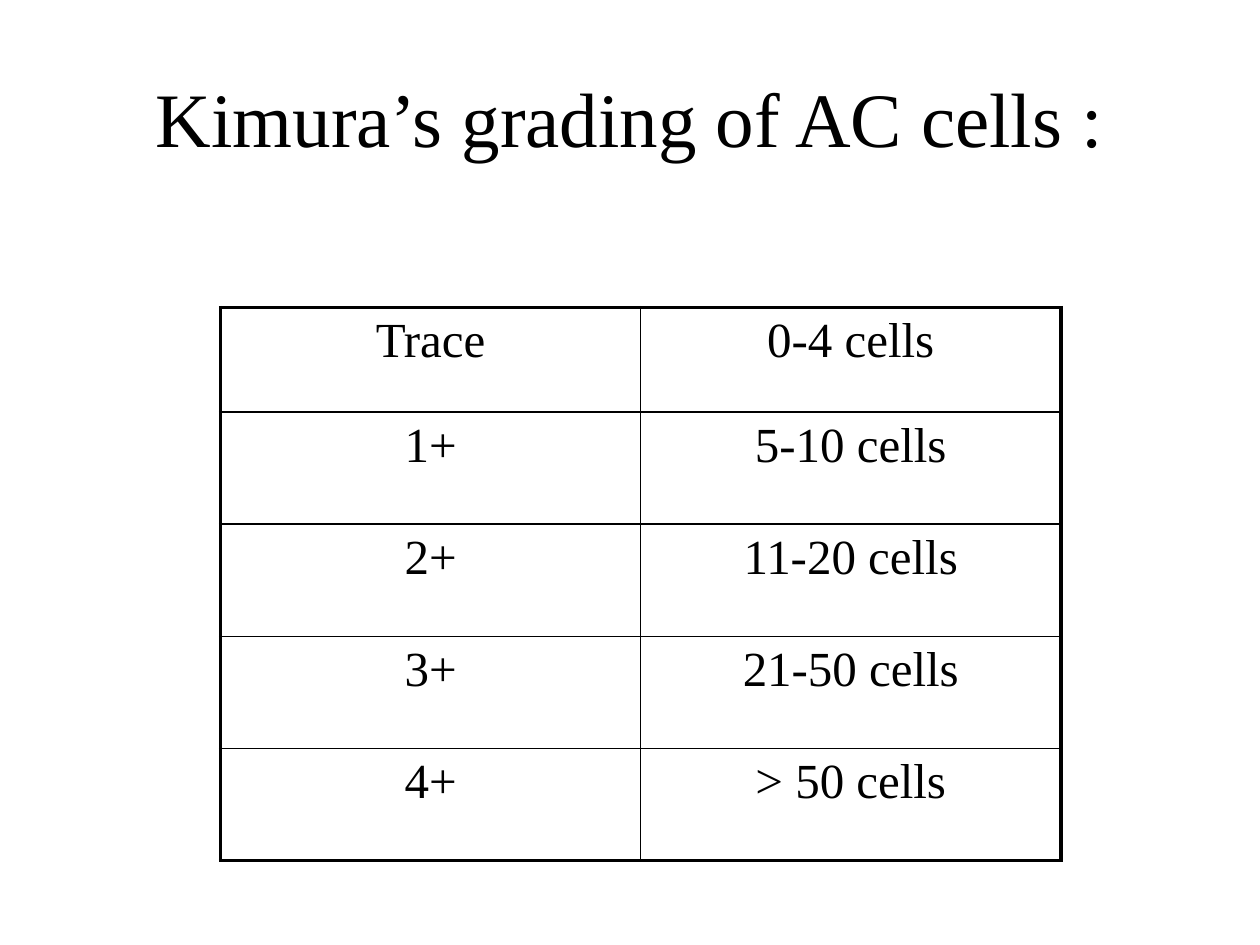
from lxml.etree import SubElement
from pptx import Presentation
from pptx.dml.color import RGBColor
from pptx.enum.text import MSO_ANCHOR, PP_ALIGN
from pptx.oxml.ns import qn
from pptx.util import Inches, Pt

FONT = "Times New Roman"
BLACK = "000000"
OUTER, INNER = 2.25, 1
GRADES = [
    ("Trace", "0-4 cells"),
    ("1+", "5-10 cells"),
    ("2+", "11-20 cells"),
    ("3+", "21-50 cells"),
    ("4+", "> 50 cells"),
]


def rgb(value):
    return RGBColor.from_string(value)


def write(tf, text, size, color=BLACK, align=PP_ALIGN.CENTER, anchor=MSO_ANCHOR.TOP):
    tf.word_wrap = True
    tf.vertical_anchor = anchor
    p = tf.paragraphs[0]
    p.alignment = align
    r = p.add_run()
    r.text = text
    r.font.name = FONT
    r.font.size = Pt(size)
    r.font.color.rgb = rgb(color)


def set_border(cell, side, width, color=BLACK):
    tc_pr = cell._tc.get_or_add_tcPr()
    ln = SubElement(tc_pr, qn(f"a:ln{side}"), w=str(Pt(width)))
    fill = SubElement(ln, qn("a:solidFill"))
    SubElement(fill, qn("a:srgbClr"), val=color)


def add_title(s, text, left, top, width, height):
    sp = s.shapes.title
    sp.left, sp.top = Inches(left), Inches(top)
    sp.width, sp.height = Inches(width), Inches(height)
    write(sp.text_frame, text, 44, anchor=MSO_ANCHOR.MIDDLE)


def add_grading_table(s, rows, left, top, width, height, first_height):
    n_rows, n_cols = len(rows), len(rows[0])
    table = s.shapes.add_table(
        n_rows, n_cols, Inches(left), Inches(top), Inches(width), Inches(height)
    ).table
    table.first_row = table.horz_banding = False
    for col in table.columns:
        col.width = Inches(width / n_cols)
    for i, row in enumerate(table.rows):
        rest = (height - first_height) / (n_rows - 1)
        row.height = Inches(rest if i else first_height)
        for j, cell in enumerate(row.cells):
            edges = {
                "L": j == 0,
                "R": j == n_cols - 1,
                "T": i == 0,
                "B": i == n_rows - 1,
            }
            for side, is_outer in edges.items():
                set_border(cell, side, OUTER if is_outer else INNER)
            cell.fill.background()
            cell.vertical_anchor = MSO_ANCHOR.TOP
            write(cell.text_frame, rows[i][j], 28)


def main():
    prs = Presentation()
    prs.slide_width, prs.slide_height = Inches(10), Inches(7.5)
    s = prs.slides.add_slide(prs.slide_layouts[5])
    s.background.fill.solid()
    s.background.fill.fore_color.rgb = rgb("FFFFFF")
    add_title(s, "Kimura’s grading of AC cells :", 0.5, 0.3, 9, 1.25)
    add_grading_table(s, GRADES, 1.75, 2.44, 6.67, 4.39, first_height=0.83)
    prs.save("out.pptx")


if __name__ == "__main__":
    main()
